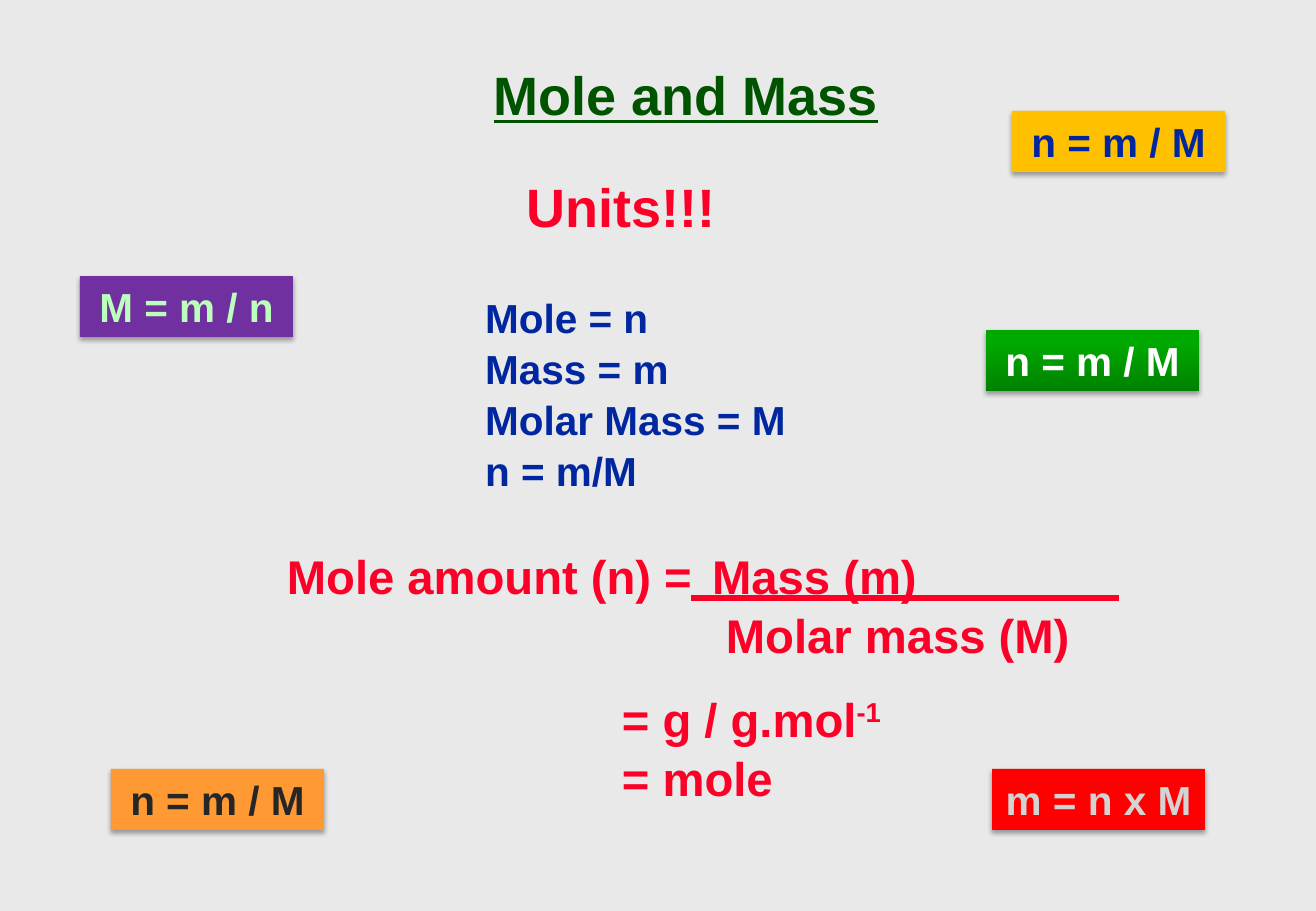
from lxml.etree import SubElement
from pptx import Presentation
from pptx.dml.color import RGBColor
from pptx.enum.shapes import MSO_CONNECTOR as CONN, MSO_SHAPE as SHAPE
from pptx.enum.text import MSO_ANCHOR as ANCHOR, MSO_AUTO_SIZE as AUTO, PP_ALIGN as ALIGN
from pptx.oxml.ns import qn
from pptx.util import Emu, Pt

SCALE = 914400 / 121.5
RED = "FC0128"
BLUE = "00279F"
FORMULAS = [
    ("n = m / M", 111, 769, "FF9933", "262626"),
    ("n = m / M", 1012, 111, "FFC000", BLUE),
    ("n = m / M", 986, 330, None, "FFFFFF"),
    ("M = m / n", 80, 276, "7030A0", "BCFFBC"),
    ("m = n x M", 992, 769, "FF0000", "D3D3D3"),
]


def px(n):
    return Emu(round(n * SCALE))


def rgb(code):
    return RGBColor.from_string(code)


def place(sp, x, y, w, h):
    sp.left, sp.top, sp.width, sp.height = px(x), px(y), px(w), px(h)


def add_run(p, text, size=28, color=RED, underline=False, baseline=0):
    r = p.add_run()
    r.text = text
    f = r.font
    f.name, f.size, f.bold = "Arial", Pt(size), True
    f.underline = underline
    f.color.rgb = rgb(color)
    if baseline:
        r._r.get_or_add_rPr().set("baseline", str(baseline * 1000))


def add_text(tf, text, align=ALIGN.LEFT, spacing=1.05, indent=0, tab=0, **font):
    p = tf.paragraphs[0]
    if p.runs:
        p = tf.add_paragraph()
    p.alignment, p.line_spacing = align, spacing
    p.space_before = p.space_after = Pt(0)
    pPr = p._p.get_or_add_pPr()
    pPr.set("marL", str(px(indent)))
    pPr.set("indent", "0")
    SubElement(pPr, qn("a:buNone"))
    if tab:
        tabs = SubElement(pPr, qn("a:tabLst"))
        SubElement(tabs, qn("a:tab"), pos=str(px(tab)), algn="l")
    add_run(p, text, **font)
    return p


def set_frame(sp, anchor=ANCHOR.TOP, wrap=True):
    tf = sp.text_frame
    tf.word_wrap, tf.vertical_anchor, tf.auto_size = wrap, anchor, AUTO.NONE
    return tf


def add_box(s, x, y, w, h):
    return set_frame(s.shapes.add_textbox(px(x), px(y), px(w), px(h)))


def add_shadow(sp):
    sp.shadow.inherit = False
    effects = sp._element.spPr.find(qn("a:effectLst"))
    shadow = SubElement(effects, qn("a:outerShdw"), blurRad=str(Pt(3.1)),
                        dist=str(Pt(1.8)), dir="5400000", rotWithShape="0")
    color = SubElement(shadow, qn("a:srgbClr"), val="000000")
    SubElement(color, qn("a:alpha"), val="35000")


def add_formula(s, text, x, y, fill, color):
    sp = s.shapes.add_shape(SHAPE.RECTANGLE, px(x), px(y), px(213), px(61))
    if fill:
        sp.fill.solid()
        sp.fill.fore_color.rgb = rgb(fill)
    else:
        sp.fill.gradient()
        sp.fill.gradient_angle = 90
        stops = zip(sp.fill.gradient_stops, (0, 0.8), ("008200", "00A900"))
        for stop, position, code in stops:
            stop.position, stop.color.rgb = position, rgb(code)
    sp.line.fill.background()
    add_shadow(sp)
    tf = set_frame(sp, ANCHOR.MIDDLE, wrap=False)
    add_text(tf, text, align=ALIGN.CENTER, spacing=1, size=24, color=color)


def add_line(s, x1, x2, y):
    line = s.shapes.add_connector(CONN.STRAIGHT, px(x1), px(y), px(x2), px(y))
    line.line.color.rgb, line.line.width = rgb(RED), Pt(3)
    SubElement(line._element.spPr, qn("a:effectLst"))


def main():
    prs = Presentation()
    prs.slide_width, prs.slide_height = px(1316), px(911)
    s = prs.slides.add_slide(prs.slide_layouts[1])
    s.background.fill.solid()
    s.background.fill.fore_color.rgb = rgb("E9E9E9")

    title, body = s.placeholders
    place(title, 253, 52, 866, 142)
    add_text(set_frame(title), "Mole and Mass", align=ALIGN.CENTER,
             size=32, color="005400", underline=True)

    place(body, 351, 285, 637, 209)
    tf = set_frame(body)
    for text in ("Mole = n", "Mass = m", "Molar Mass = M", "n = m/M"):
        add_text(tf, text, indent=122, size=24, color=BLUE)

    tf = add_box(s, 275, 538, 877, 126)
    add_text(tf, "Mole amount (n) =\tMass (m)", tab=548)
    add_text(tf, "Molar mass (M)", indent=439)
    add_line(s, 691, 1119, 598)

    tf = add_box(s, 610, 681, 454, 125)
    add_run(add_text(tf, "= g / g.mol"), "-1", baseline=30)
    add_text(tf, "= mole")

    add_text(add_box(s, 515, 164, 215, 78), "Units!!!", size=32)

    for formula in FORMULAS:
        add_formula(s, *formula)
    prs.save("out.pptx")


if __name__ == "__main__":
    main()
